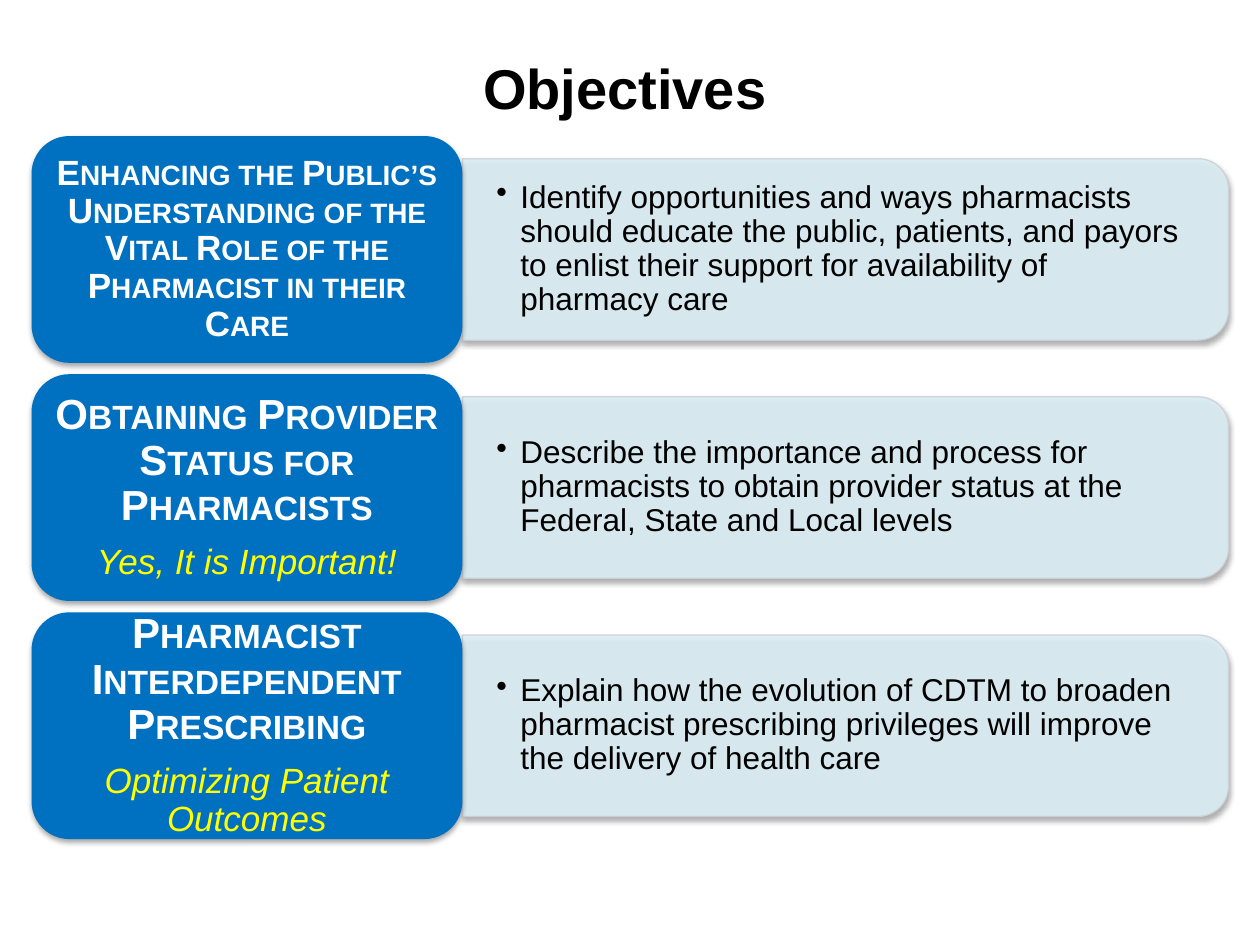
from dataclasses import dataclass

from lxml import etree
from pptx import Presentation
from pptx import util as u
from pptx.dml.color import RGBColor
from pptx.enum import shapes, text
from pptx.oxml import ns


@dataclass(frozen=True)
class Theme:
    font: str = "Arial"
    blue: str = "0070C0"
    pale: str = "DBEEF4"
    edge: str = "CDD0D7"
    white: str = "FFFFFF"
    black: str = "000000"
    yellow: str = "FFFF00"
    title: int = 32
    note: int = 20
    body: int = 18


@dataclass(frozen=True)
class Goal:
    head: str
    size: int
    body: str
    note: str = ""


THEME = Theme()
GOALS = [
    Goal("Enhancing the Public’s Understanding of the Vital Role of the Pharmacist in their Care", 20,
         "Identify opportunities and ways pharmacists should educate the public, patients, and payors "
         "to enlist their support for availability of pharmacy care"),
    Goal("Obtaining Provider Status for Pharmacists", 24,
         "Describe the importance and process for pharmacists to obtain provider status at the "
         "Federal, State and Local levels",
         "Yes, It is Important!"),
    Goal("Pharmacist Interdependent Prescribing", 24,
         "Explain how the evolution of CDTM to broaden pharmacist prescribing privileges will "
         "improve the delivery of health care",
         "Optimizing Patient Outcomes"),
]

# Row grid, in inches
LEFT, TOP, PITCH = 0.25, 1.08, 1.89
HEAD_W, HEAD_H = 3.42, 1.8
BODY_W, BODY_H = 6.08, 1.44
PAD = 0.09


def add(node, tag: str, **attrs: str):
    """Append a DrawingML child and return it."""
    return etree.SubElement(node, ns.qn(f"a:{tag}"), attrs)


def fade(fill) -> None:
    """Make a solid fill 90% opaque."""
    for clr in fill.iter(ns.qn("a:srgbClr")):
        add(clr, "alpha", val="90000")


def shade(shape) -> None:
    """Give a shape a soft shadow straight below."""
    shape.shadow.inherit = False
    effect = shape.element.spPr.find(ns.qn("a:effectLst"))
    outer = add(effect, "outerShdw", blurRad=str(u.Pt(3.1)), dist=str(u.Pt(1.8)),
                dir="5400000", rotWithShape="0")
    add(add(outer, "srgbClr", val=THEME.black), "alpha", val="35000")


def block(slide, kind, x: float, y: float, w: float, h: float, fill: str):
    """Draw a filled, shadowed shape without outline."""
    shape = slide.shapes.add_shape(kind, *map(u.Inches, (x, y, w, h)))
    shape.fill.solid()
    shape.fill.fore_color.rgb = RGBColor.from_string(fill)
    shape.line.fill.background()
    shade(shape)
    return shape


def label(slide, x: float, y: float, w: float, h: float, dx: float, dy: float):
    """Add a wrapped, middle-anchored text box and return its frame."""
    frame = slide.shapes.add_textbox(*map(u.Inches, (x, y, w, h))).text_frame
    frame.word_wrap = True
    frame.vertical_anchor = text.MSO_ANCHOR.MIDDLE
    frame.margin_left = frame.margin_right = u.Inches(dx)
    frame.margin_top = frame.margin_bottom = u.Inches(dy)
    return frame


def style(para, size: int, color: str, bold: bool = False, slant: bool = False) -> None:
    """Format the runs of a paragraph."""
    for run in para.runs:
        font = run.font
        font.name, font.size = THEME.font, u.Pt(size)
        font.bold, font.italic = bold, slant
        font.color.rgb = RGBColor.from_string(color)


def draw_body(slide, goal: Goal, mid: float) -> None:
    """Draw the pale panel, a tall shape turned on its side, and its bullet."""
    x = LEFT + HEAD_W
    panel = block(slide, shapes.MSO_SHAPE.ROUND_2_SAME_RECTANGLE,
                  x + (BODY_W - BODY_H) / 2, mid - BODY_W / 2, BODY_H, BODY_W, THEME.pale)
    panel.rotation = 90
    panel.line.color.rgb = RGBColor.from_string(THEME.edge)
    panel.line.width = u.Pt(0.75)
    fade(panel.element.spPr.find(ns.qn("a:solidFill")))
    fade(panel.element.spPr.find(ns.qn("a:ln")))

    para = label(slide, x, mid - 0.65, 6.01, 1.3, 0.27, 0.14).paragraphs[0]
    para.text = goal.body
    para.line_spacing = 0.9
    props = para._p.get_or_add_pPr()
    props.set("marL", str(u.Inches(0.19)))
    props.set("indent", str(u.Inches(-0.19)))
    add(props, "buChar", char="•")
    style(para, THEME.body, THEME.black)


def draw_head(slide, goal: Goal, top: float) -> None:
    """Draw the blue box with its small-caps heading and optional note."""
    block(slide, shapes.MSO_SHAPE.ROUNDED_RECTANGLE, LEFT, top, HEAD_W, HEAD_H, THEME.blue)
    frame = label(slide, LEFT + PAD, top + PAD, HEAD_W - 2 * PAD, HEAD_H - 2 * PAD, 0.08, 0.04)
    para = frame.paragraphs[0]
    para.text = goal.head
    style(para, goal.size, THEME.white, bold=True)
    para.runs[0].font._element.set("cap", "small")
    if goal.note:
        note = frame.add_paragraph()
        note.text = goal.note
        note.space_before = u.Pt(0.35 * goal.size)
        style(note, THEME.note, THEME.yellow, slant=True)
    for para in frame.paragraphs:
        para.alignment = text.PP_ALIGN.CENTER
        para.line_spacing = 0.9


def draw_title(slide, words: str) -> None:
    """Place and format the slide title."""
    title = slide.shapes.title
    title.left, title.top, title.width, title.height = map(u.Inches, (0.42, 0.3, 9.08, 0.78))
    frame = title.text_frame
    frame.text = words
    frame.vertical_anchor = text.MSO_ANCHOR.MIDDLE
    frame.paragraphs[0].alignment = text.PP_ALIGN.CENTER
    style(frame.paragraphs[0], THEME.title, THEME.black, bold=True)


def main() -> None:
    deck = Presentation()
    deck.slide_width, deck.slide_height = u.Inches(10), u.Inches(7.5)
    slide = deck.slides.add_slide(deck.slide_layouts[5])
    draw_title(slide, "Objectives")

    # One row per objective
    for i, goal in enumerate(GOALS):
        top = TOP + i * PITCH
        draw_body(slide, goal, top + HEAD_H / 2)
        draw_head(slide, goal, top)

    deck.save("out.pptx")


if __name__ == "__main__":
    main()
